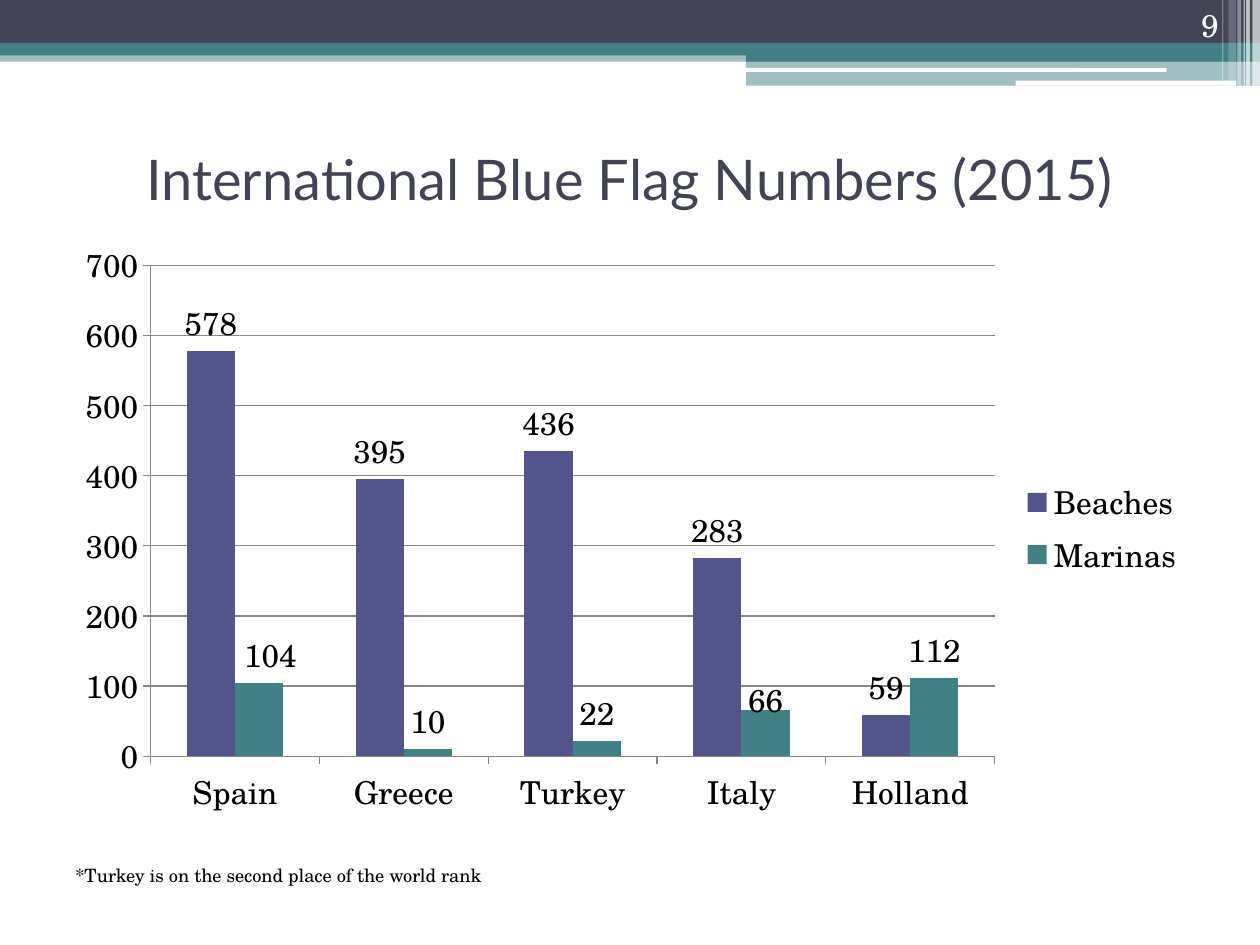
import pptx
import pptx.chart.data
import pptx.dml.color
import pptx.enum.chart
import pptx.enum.shapes
import pptx.enum.text
import pptx.oxml
import pptx.oxml.ns
import pptx.util
from pptx.util import Inches

NAVY, TEAL, WHITE, BLACK = "424456", "438086", "FFFFFF", "000000"
HEAD, BODY = "Lato", "TeX Gyre Schola"
BANDS = [
    (0, 0.4, 10, 0.09, TEAL, 50),
    (0, 0, 10, 0.34, NAVY, 100),
    (0, 0.34, 10, 0.1, TEAL, 100),
    (5.92, 0.39, 4.08, 0.1, TEAL, 100),
    (5.92, 0.48, 4.08, 0.2, TEAL, 50),
]
LINES = [(5.91, 0.54, 3.35, 0.03, WHITE, 100), (8.06, 0.64, 1.75, 0.04, WHITE, 100)]
STRIPES = [
    (9.94, 0.06, 0.68, 65),
    (9.89, 0.03, 0.68, 65),
    (9.87, 0.01, 0.68, 60),
    (9.82, 0.03, 0.68, 40),
    (9.75, 0.06, 0.64, 20),
    (9.7, 0.01, 0.64, 30),
]
TITLE = "International Blue Flag Numbers (2015)"
NOTE = "*Turkey is on the second place of the world rank"
LANDS = ["Spain", "Greece", "Turkey", "Italy", "Holland"]
SERIES = [
    ("Beaches", [578, 395, 436, 283, 59], "53548A"),
    ("Marinas", [104, 10, 22, 66, 112], TEAL),
]
SHIFTS = {0: (0.01, 0), 3: (0, 0.03)}


def rgb(code):
    return pptx.dml.color.RGBColor.from_string(code)


def style(font, name, size, color):
    font.name, font.size = name, pptx.util.Pt(size)
    font.color.rgb = rgb(color)


def band(slide, kind, left, top, width, height, color, alpha):
    shape = slide.shapes.add_shape(kind, *map(Inches, (left, top, width, height)))
    shape.shadow.inherit = False
    shape.fill.solid()
    shape.fill.fore_color.rgb = rgb(color)
    shape.line.fill.background()
    if alpha < 100:
        tone = shape._element.spPr.find(".//" + pptx.oxml.ns.qn("a:srgbClr"))
        tone.append(pptx.oxml.parse_xml(
            f'<a:alpha {pptx.oxml.ns.nsdecls("a")} val="{alpha * 1000}"/>'))


def write(shape, box, text, name, size, color, align, anchor):
    shape.left, shape.top, shape.width, shape.height = map(Inches, box)
    frame = shape.text_frame
    frame.word_wrap = True
    frame.auto_size = pptx.enum.text.MSO_AUTO_SIZE.NONE
    frame.vertical_anchor = anchor
    para = frame.paragraphs[0]
    para.alignment = align
    run = para.add_run()
    run.text = text
    style(run.font, name, size, color)


def nudge(series, shifts):
    """Move single value labels by a share of the chart size."""
    outer = pptx.enum.chart.XL_LABEL_POSITION.OUTSIDE_END
    for index, (dx, dy) in shifts.items():
        series.points[index].data_label.position = outer
        mark = series._element.xpath(f"c:dLbls/c:dLbl/c:idx[@val='{index}']")[0]
        mark.addnext(pptx.oxml.parse_xml(
            f'<c:layout {pptx.oxml.ns.nsdecls("c")}><c:manualLayout>'
            f'<c:x val="{dx}"/><c:y val="{dy}"/></c:manualLayout></c:layout>'))


def graph(slide):
    enum = pptx.enum.chart
    data = pptx.chart.data.CategoryChartData()
    data.categories = LANDS
    for name, values, _ in SERIES:
        data.add_series(name, values)
    chart = slide.shapes.add_chart(
        enum.XL_CHART_TYPE.COLUMN_CLUSTERED,
        *map(Inches, (0.5, 1.83, 9, 4.73)), data).chart
    style(chart.font, BODY, 18, BLACK)
    chart.has_title = False
    chart.has_legend = True
    chart.legend.position = enum.XL_LEGEND_POSITION.RIGHT
    chart.legend.include_in_layout = False
    axis = chart.value_axis
    axis.minimum_scale, axis.maximum_scale, axis.major_unit = 0, 700, 100
    axis.has_major_gridlines = True
    for line in (axis.format.line, axis.major_gridlines.format.line,
                 chart.category_axis.format.line):
        line.color.rgb = rgb("868686")
        line.width = pptx.util.Pt(0.75)
    for side in (axis, chart.category_axis):
        side.major_tick_mark = enum.XL_TICK_MARK.OUTSIDE
    plot = chart.plots[0]
    plot.gap_width, plot.overlap, plot.vary_by_categories = 150, 0, False
    for series, (_, _, color) in zip(plot.series, SERIES):
        series.format.fill.solid()
        series.format.fill.fore_color.rgb = rgb(color)
        labels = series.data_labels
        labels.show_value = True
        labels.position = enum.XL_LABEL_POSITION.OUTSIDE_END
    nudge(plot.series[1], SHIFTS)


def main():
    deck = pptx.Presentation()
    deck.slide_width, deck.slide_height = Inches(10), Inches(7.5)
    slide = deck.slides.add_slide(deck.slide_layouts[5])
    kind = pptx.enum.shapes.MSO_SHAPE
    for item in BANDS:
        band(slide, kind.RECTANGLE, *item)
    for item in LINES:
        band(slide, kind.ROUNDED_RECTANGLE, *item)
    for left, width, height, alpha in STRIPES:
        band(slide, kind.RECTANGLE, left, 0, width, height, WHITE, alpha)
    align, anchor = pptx.enum.text.PP_ALIGN, pptx.enum.text.MSO_ANCHOR
    write(slide.shapes.title, (0.5, 0.83, 9, 1.17), TITLE, HEAD, 32, NAVY,
          align.CENTER, anchor.MIDDLE)
    graph(slide)
    for box, text, size, color, side, base in [
        ((8.94, 0, 0.83, 0.4), "9", 18, WHITE, align.RIGHT, anchor.BOTTOM),
        ((0.5, 6.81, 9, 0.28), NOTE, 10.5, BLACK, align.LEFT, anchor.TOP),
    ]:
        label = slide.shapes.add_textbox(0, 0, 0, 0)
        write(label, box, text, BODY, size, color, side, base)
    deck.save("out.pptx")


if __name__ == "__main__":
    main()
